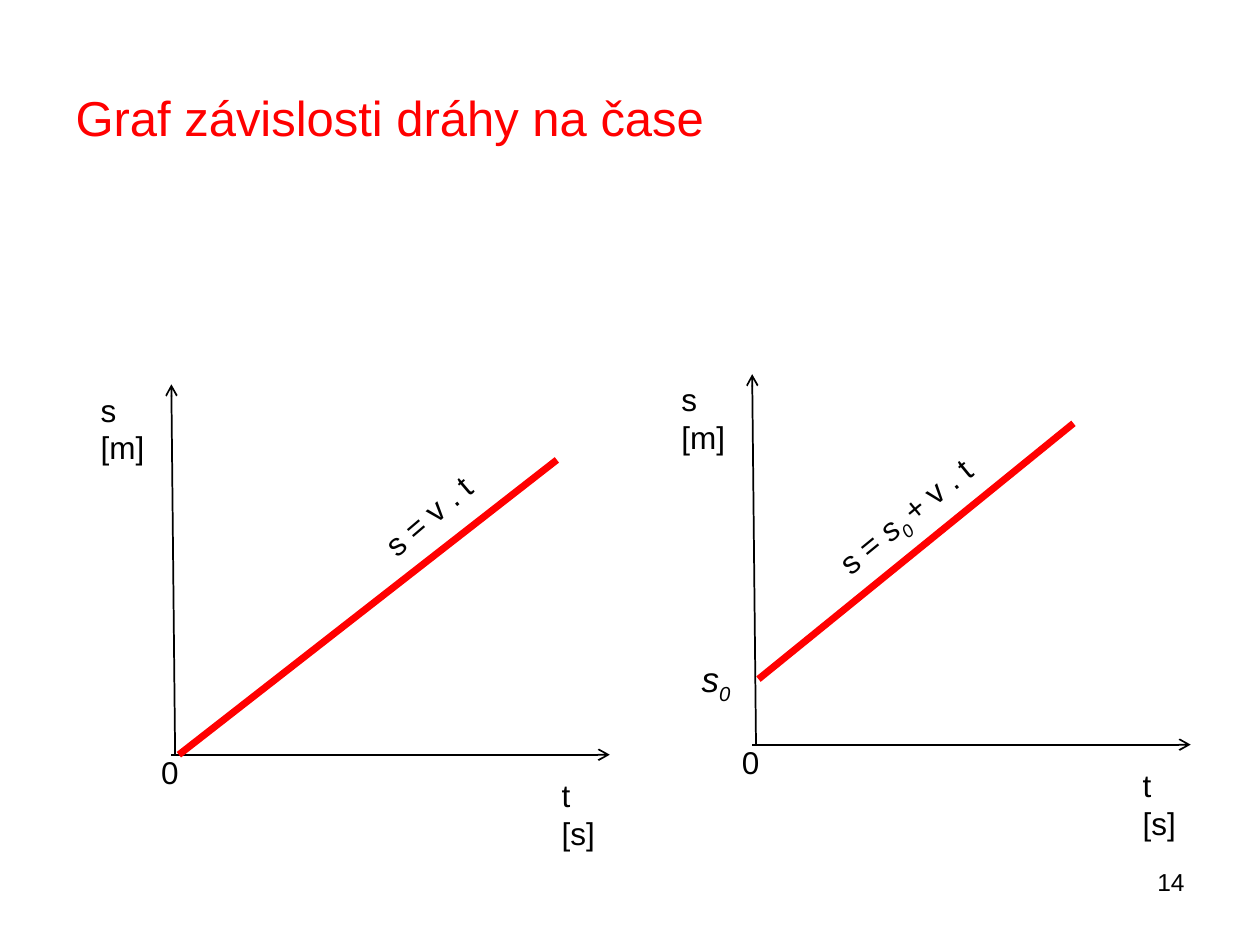
import dataclasses

import pptx
import pptx.dml.color
import pptx.enum.shapes
import pptx.enum.text
import pptx.oxml.ns
import pptx.util
from lxml import etree
from pptx.util import Inches


@dataclasses.dataclass
class Theme:
    font: str = "Arial"
    accent: str = "FF0000"
    ink: str = "000000"
    title_size: int = 28
    label_size: int = 18
    intercept_size: int = 20
    number_size: int = 14
    axis_width: int = 1
    graph_width: int = 4


theme = Theme()
ALIGN = pptx.enum.text.PP_ALIGN
ANCHOR = pptx.enum.text.MSO_ANCHOR


def write(shape, runs, size, color=theme.ink, align=ALIGN.LEFT, anchor=ANCHOR.TOP):
    """Fill a shape with one paragraph; each run is (text, italic, baseline)."""
    frame = shape.text_frame
    frame.word_wrap = True
    frame.vertical_anchor = anchor
    paragraph = frame.paragraphs[0]
    paragraph.alignment = align
    paragraph.font.name = theme.font
    paragraph.font.size = pptx.util.Pt(size)
    paragraph.font.color.rgb = pptx.dml.color.RGBColor.from_string(color)
    for text, italic, baseline in runs:
        run = paragraph.add_run()
        run.text = text
        if italic:
            run.font.italic = True
        if baseline:
            run._r.get_or_add_rPr().set("baseline", str(baseline))


def draw_line(group, start, end, color, width, arrow=False):
    """Draw a straight line, with an optional arrowhead at its start."""
    line = group.shapes.add_connector(
        pptx.enum.shapes.MSO_CONNECTOR.STRAIGHT,
        *[Inches(value) for value in (*start, *end)])
    line.line.color.rgb = pptx.dml.color.RGBColor.from_string(color)
    line.line.width = pptx.util.Pt(width)
    if arrow:
        head = etree.SubElement(line.line._get_or_add_ln(), pptx.oxml.ns.qn("a:headEnd"))
        head.set("type", "arrow")
    etree.SubElement(line._element.spPr, pptx.oxml.ns.qn("a:effectLst"))


presentation = pptx.Presentation()
presentation.slide_width = Inches(10)
presentation.slide_height = Inches(7.5)
slide = presentation.slides.add_slide(presentation.slide_layouts[5])

# Title
title = slide.shapes.title
title.left, title.top = Inches(0.5), Inches(0.3)
title.width, title.height = Inches(9), Inches(1.25)
write(title, [("Graf závislosti dráhy na čase", False, 0)],
      theme.title_size, theme.accent, anchor=ANCHOR.MIDDLE)

# Slide number
number = slide.shapes.add_textbox(Inches(7.17), Inches(6.83), Inches(2.33), Inches(0.52))
write(number, [("14", False, 0)], theme.number_size, align=ALIGN.RIGHT)

# Axis labels: text, then left, top and width relative to the origin
axis_labels = [
    ("t [s]", 3.00, 0.12, 0.47),
    ("s [m]", -0.66, -2.94, 0.58),
    ("0", -0.18, -0.06, 0.26),
]

# Each graph: origin, ends of the line, formula box, its rotation and its runs
graphs = [
    ((1.36, 5.99), (1.42, 5.99), (4.42, 3.65), (2.85, 3.87, 1.11, 0.31), 319.4,
     [("s = v . t", False, 0)]),
    ((5.97, 5.91), (6.02, 5.39), (8.52, 3.36), (6.4, 3.76, 1.89, 0.4), 320.7,
     [("s = ", False, 0), ("s", True, 0), ("0 ", True, -25000), ("+ v . t", False, 0)]),
]

for (x, y), start, end, formula_box, rotation, formula_runs in graphs:
    group = slide.shapes.add_group_shape()

    # Axes
    draw_line(group, (x + 3.48, y), (x, y), theme.ink, theme.axis_width, arrow=True)
    draw_line(group, (x, y - 2.94), (x + 0.03, y), theme.ink, theme.axis_width, arrow=True)
    for text, left, top, width in axis_labels:
        label = group.shapes.add_textbox(
            Inches(x + left), Inches(y + top), Inches(width), Inches(0.31))
        write(label, [(text, False, 0)], theme.label_size)

    # Distance line and its formula
    draw_line(group, start, end, theme.accent, theme.graph_width)
    formula = group.shapes.add_textbox(*[Inches(value) for value in formula_box])
    formula.rotation = rotation
    write(formula, formula_runs, theme.label_size)
    formula.text_frame.auto_size = pptx.enum.text.MSO_AUTO_SIZE.SHAPE_TO_FIT_TEXT

# Starting distance, in the second graph
intercept = group.shapes.add_textbox(Inches(5.47), Inches(5.08), Inches(0.52), Inches(0.57))
write(intercept, [("s", True, 0), ("0", True, -25000)],
      theme.intercept_size, anchor=ANCHOR.BOTTOM)

presentation.save("out.pptx")
